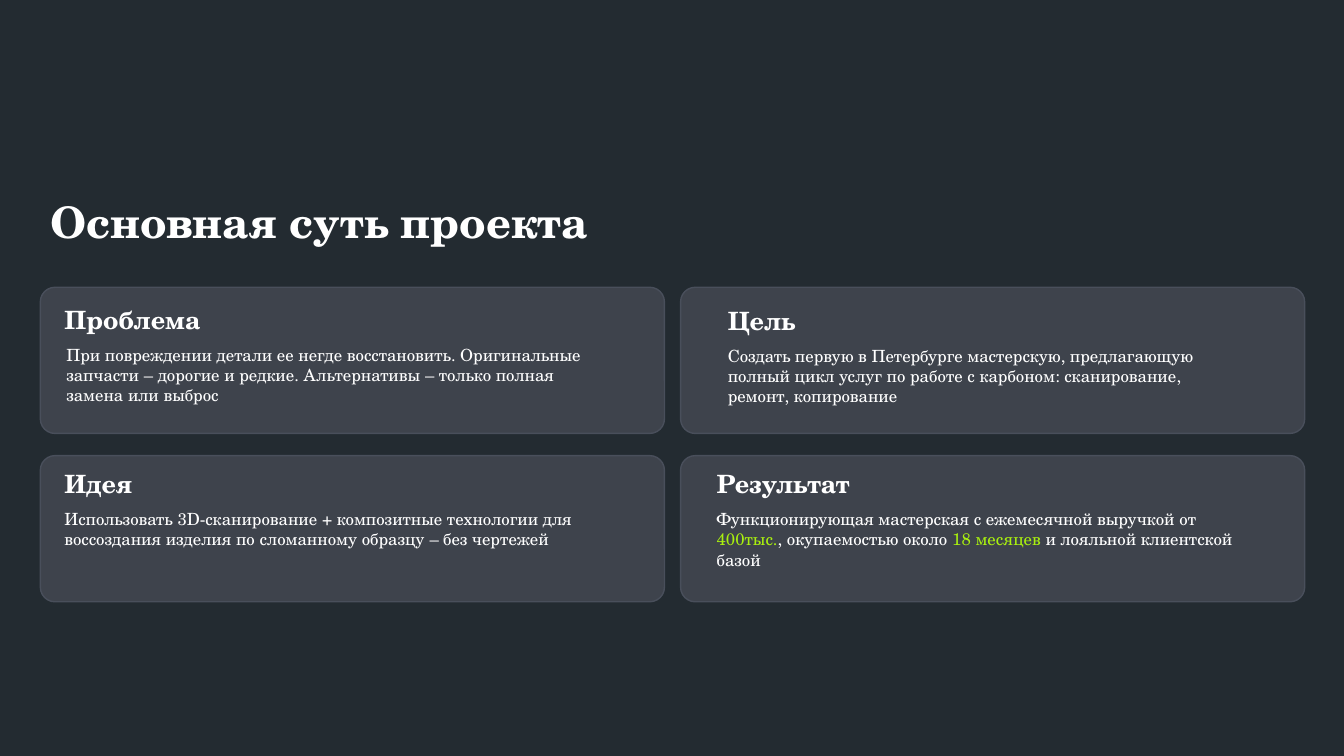
import pptx
import pptx.util
import pptx.dml.color
import pptx.enum.shapes
import pptx.enum.text

FONT = "TeX Gyre Schola"
COLORS = {
    "background": "232B31",
    "card": "3E434C",
    "border": "494F5B",
    "text": "FFFFFF",
    "accent": "A9F00F",
}

# Card grid, in inches
LEFT, TOP = 0.4, 2.85
CARD_W, CARD_H = 6.19, 1.45
STEP_X, STEP_Y = 6.35, 1.67
HEADING_H = 0.4

# Per card: column, row, text inset (x, y), body shift, body width, heading, body runs
CARDS = [
    (0, 0, 0.14, 0.12, 0.02, 5.47, "Проблема",
     [("При повреждении детали ее негде восстановить. Оригинальные запчасти – "
       "дорогие и редкие. Альтернативы – только полная замена или выброс", "text")]),
    (1, 0, 0.37, 0.13, 0, 5.34, "Цель",
     [("Создать первую в Петербурге мастерскую, предлагающую полный цикл услуг "
       "по работе с карбоном: сканирование, ремонт, копирование", "text")]),
    (0, 1, 0.14, 0.08, 0, 5.5, "Идея",
     [("Использовать 3D-сканирование + композитные технологии для воссоздания "
       "изделия по сломанному образцу – без чертежей", "text")]),
    (1, 1, 0.26, 0.08, 0, 5.34, "Результат",
     [("Функционирующая мастерская с ежемесячной выручкой от ", "text"),
      ("400тыс.", "accent"),
      (", окупаемостью около ", "text"),
      ("18 месяцев", "accent"),
      (" и лояльной клиентской базой", "text")]),
]


def rgb(name):
    return pptx.dml.color.RGBColor.from_string(COLORS[name])


def add_text(slide, box, runs, size, bold=False):
    """Place one wrapped paragraph of (text, colour) runs in the box."""
    textbox = slide.shapes.add_textbox(*map(pptx.util.Inches, box))
    frame = textbox.text_frame
    frame.word_wrap = True
    paragraph = frame.paragraphs[0]
    paragraph.font.name = FONT
    paragraph.font.size = pptx.util.Pt(size)
    paragraph.font.bold = bold
    for text, color in runs:
        run = paragraph.add_run()
        run.text = text
        run.font.color.rgb = rgb(color)
    return frame


def add_title(slide, box):
    title = add_text(slide, box, [("Основная суть проекта", "text")], 31, bold=True)
    title.vertical_anchor = pptx.enum.text.MSO_ANCHOR.MIDDLE
    title.margin_bottom = pptx.util.Inches(0.56)
    title.paragraphs[0].line_spacing = 0.9


def add_card(slide, box, inset_x, inset_y, body_shift, body_w, heading, body):
    # Rounded panel
    panel = slide.shapes.add_shape(
        pptx.enum.shapes.MSO_SHAPE.ROUNDED_RECTANGLE, *map(pptx.util.Inches, box))
    panel.adjustments[0] = 0.1
    panel.shadow.inherit = False
    panel.fill.solid()
    panel.fill.fore_color.rgb = rgb("card")
    panel.line.color.rgb = rgb("border")
    panel.line.width = pptx.util.Pt(1)

    # Heading with the body right below it
    x, y = box[0] + inset_x, box[1] + inset_y
    add_text(slide, (x, y, 2.9, HEADING_H), [(heading, "text")], 18, bold=True)
    add_text(slide, (x + body_shift, y + HEADING_H, body_w, 0.81), body, 12)


def main():
    deck = pptx.Presentation()
    deck.slide_width = pptx.util.Inches(13.33)
    deck.slide_height = pptx.util.Inches(7.5)
    slide = deck.slides.add_slide(deck.slide_layouts[6])
    slide.background.fill.solid()
    slide.background.fill.fore_color.rgb = rgb("background")

    add_title(slide, (LEFT, 1.76, 11.5, 1.45))
    for column, row, *content in CARDS:
        box = (LEFT + column * STEP_X, TOP + row * STEP_Y, CARD_W, CARD_H)
        add_card(slide, box, *content)
    deck.save("out.pptx")


if __name__ == "__main__":
    main()
